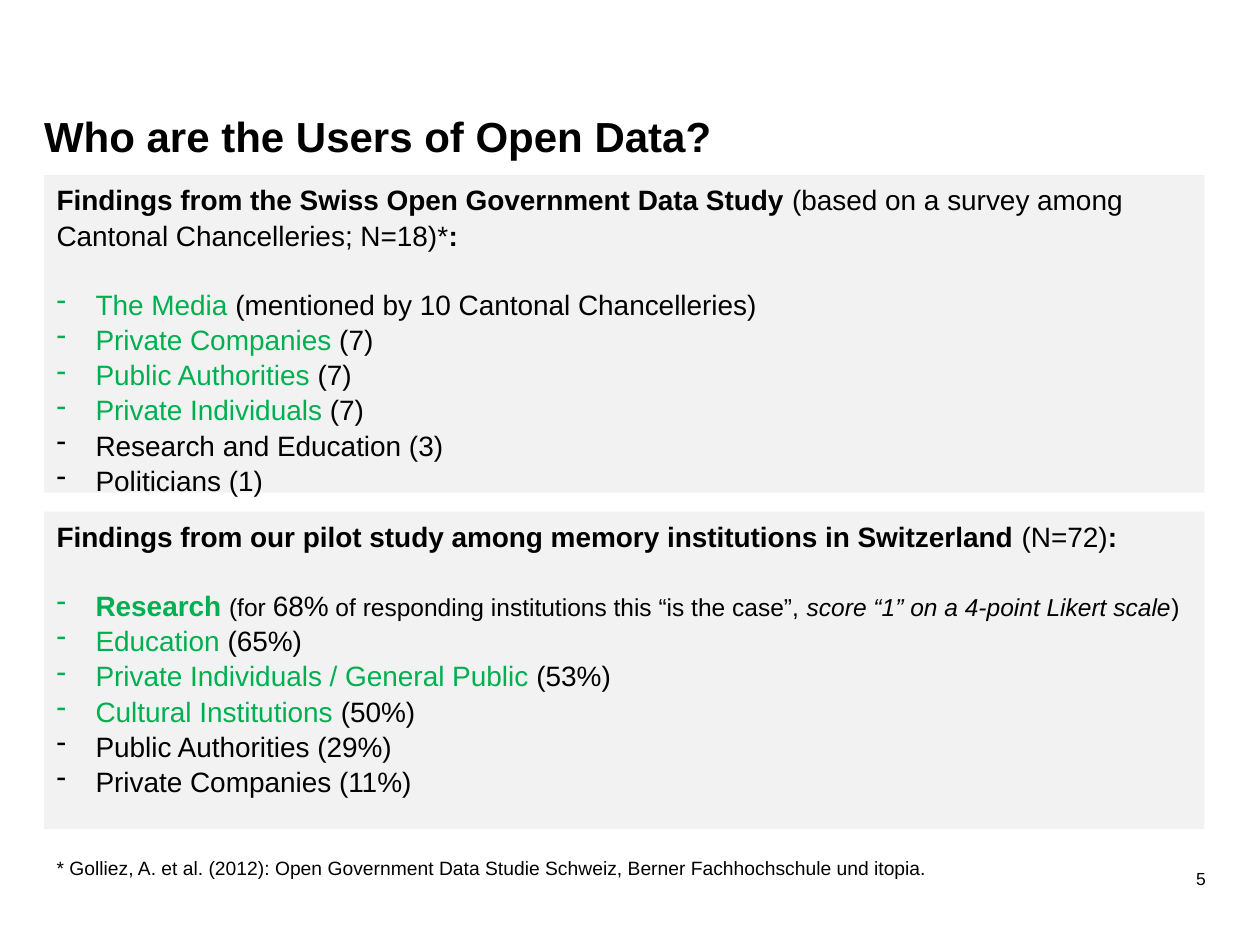
from lxml import etree
from pptx import Presentation
from pptx import util as u
from pptx.dml import color
from pptx.enum import shapes, text
from pptx.oxml import ns

BLACK, GREEN, GREY = "000000", "00B050", "F2F2F2"
LEFT, WIDTH = 0.35, 9.21

presentation = Presentation()
presentation.slide_width, presentation.slide_height = u.Inches(10), u.Inches(7.5)
slide = presentation.slides.add_slide(presentation.slide_layouts[6])


def rgb(value):
    return color.RGBColor.from_string(value)


def write(paragraph, pieces, align=text.PP_ALIGN.LEFT):
    """Each piece is (wording, size, colour, style); style holds b and/or i."""
    paragraph.alignment = align
    paragraph.line_spacing = 1.05
    for wording, size, colour, style in pieces:
        run = paragraph.add_run()
        run.text = wording
        run.font.name, run.font.size = "Arial", u.Pt(size)
        run.font.color.rgb = rgb(colour)
        run.font.bold, run.font.italic = "b" in style, "i" in style


# Title, footnote and slide number
labels = [
    ("Who are the Users of Open Data?", LEFT, 0.84, WIDTH, 0.55, 24, "b", 0, 0.02, text.PP_ALIGN.LEFT),
    ("* Golliez, A. et al. (2012): Open Government Data Studie Schweiz, "
     "Berner Fachhochschule und itopia.", LEFT, 6.74, WIDTH, 0.29, 11, "", 0.1, 0.05, text.PP_ALIGN.LEFT),
    ("5", 7.07, 6.83, 2.5, 0.5, 10, "", 0, 0.05, text.PP_ALIGN.RIGHT),
]
for wording, left, top, width, height, size, style, side, inset, align in labels:
    box = slide.shapes.add_textbox(*map(u.Inches, (left, top, width, height)))
    frame = box.text_frame
    frame.word_wrap = True
    frame.margin_left = frame.margin_right = u.Inches(side)
    frame.margin_top = frame.margin_bottom = u.Inches(inset)
    write(frame.paragraphs[0], [(wording, size, BLACK, style)], align)

# Findings: heading, sample note, then (green part, black part) for each user group
panels = [
    (1.39, "Findings from the Swiss Open Government Data Study ",
     "(based on a survey among Cantonal Chancelleries; N=18)*",
     [("The Media ", "(mentioned by 10 Cantonal Chancelleries)"),
      ("Private Companies", " (7)"),
      ("Public Authorities ", "(7)"),
      ("Private Individuals", " (7)"),
      ("", "Research and Education (3)"),
      ("", "Politicians (1)")]),
    (4.06, "Findings from our pilot study among memory institutions in Switzerland ",
     "(N=72)",
     [[("Research ", 16, GREEN, "b"), ("(for ", 14, BLACK, ""), ("68%", 16, BLACK, ""),
       (" of responding institutions this “is the case”, ", 14, BLACK, ""),
       ("score “1” on a 4-point Likert scale", 14, BLACK, "i"), (")", 14, BLACK, "")],
      ("Education ", "(65%)"),
      ("Private Individuals / General Public", " (53%)"),
      ("Cultural Institutions ", "(50%)"),
      ("", "Public Authorities (29%)"),
      ("", "Private Companies (11%)")]),
]
for top, heading, sample, groups in panels:
    panel = slide.shapes.add_shape(
        shapes.MSO_SHAPE.RECTANGLE, *map(u.Inches, (LEFT, top, WIDTH, 2.52)))
    panel.shadow.inherit = False
    panel.fill.solid()
    panel.fill.fore_color.rgb = rgb(GREY)
    panel.line.fill.background()
    frame = panel.text_frame
    frame.word_wrap = True
    frame.vertical_anchor = text.MSO_ANCHOR.TOP
    write(frame.paragraphs[0],
          [(heading, 16, BLACK, "b"), (sample, 16, BLACK, ""), (":", 16, BLACK, "b")])

    # Dashed list, set one line below the heading
    for index, group in enumerate(groups):
        paragraph = frame.add_paragraph()
        properties = paragraph._p.get_or_add_pPr()
        properties.set("marL", str(u.Inches(0.31)))
        properties.set("indent", str(-u.Inches(0.31)))
        etree.SubElement(properties, ns.qn("a:buChar")).set("char", "-")
        if index == 0:
            paragraph.space_before = u.Pt(19.3)
        if isinstance(group, tuple):
            group = [(part, 16, colour, "")
                     for part, colour in zip(group, (GREEN, BLACK)) if part]
        write(paragraph, group)

presentation.save("out.pptx")
